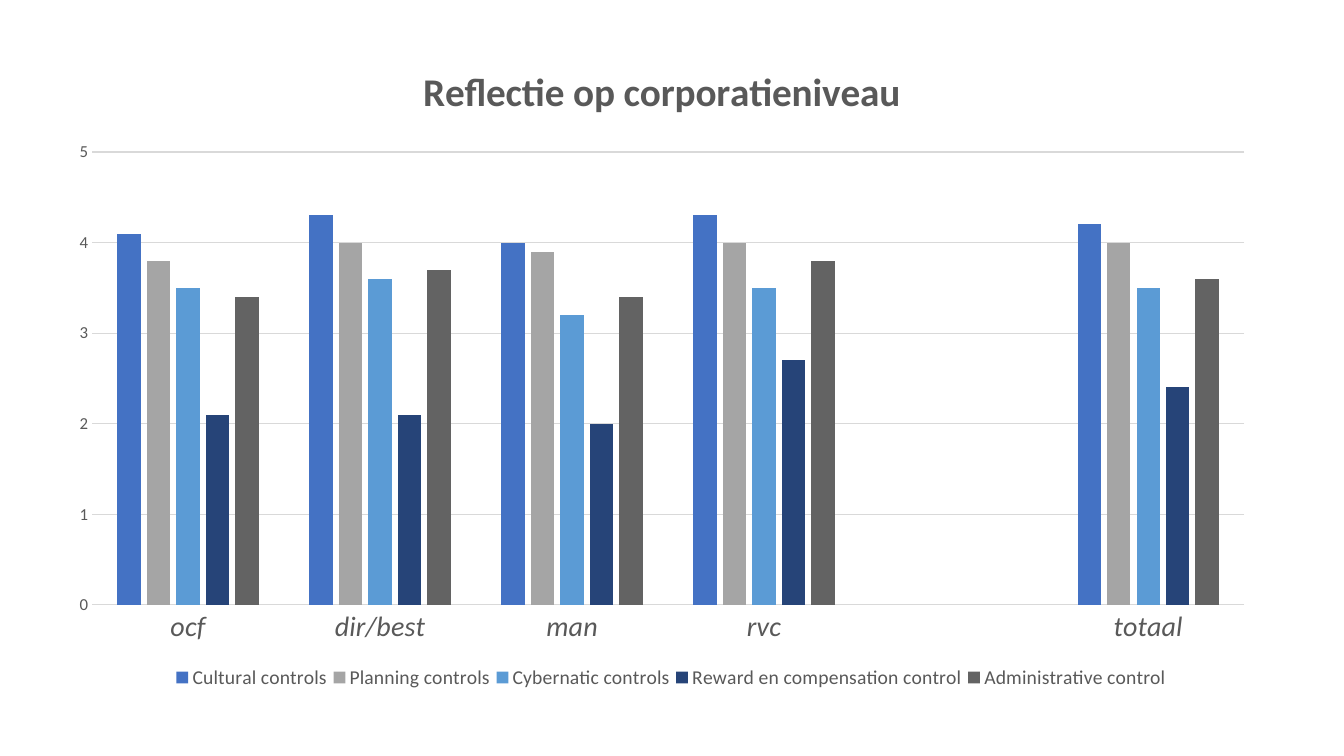
from lxml import etree
from pptx import Presentation, util as u
from pptx.chart.data import CategoryChartData
from pptx.dml.color import RGBColor
from pptx.enum import chart as c
from pptx.oxml import ns

# Content
TITLE = "Reflectie op corporatieniveau"
GROUPS = ["ocf", "dir/best", "man", "rvc", "", "totaal"]
CONTROLS = [
    ("Cultural controls", "blue", [4.1, 4.3, 4, 4.3, None, 4.2]),
    ("Planning controls", "silver", [3.8, 4, 3.9, 4, None, 4]),
    ("Cybernatic controls", "sky", [3.5, 3.6, 3.2, 3.5, None, 3.5]),
    ("Reward en compensation control", "navy", [2.1, 2.1, 2, 2.7, None, 2.4]),
    ("Administrative control", "slate", [3.4, 3.7, 3.4, 3.8, None, 3.6]),
]
COLORS = {
    "blue": "4472C4", "silver": "A5A5A5", "sky": "5B9BD5", "navy": "264478",
    "slate": "636363", "text": "595959", "rule": "D9D9D9",
}

# Geometry in px
PX = 9071  # EMU per px
CHART = (55, 39, 1213, 656)
PLOT = (92, 152, 1152, 453)
TITLE_AT = (416, 58)
LEGEND = (170, 660, 1002, 35)


def rgb(name):
    return RGBColor.from_string(COLORS[name])


def style(font, size, bold=False, italic=False, color="text"):
    font.name, font.size = "Calibri", u.Pt(size)
    font.bold, font.italic = bold, italic
    font.color.rgb = rgb(color)


def write(frame, text, **fmt):
    run = frame.paragraphs[0].add_run()
    run.text = text
    style(run.font, **fmt)


def rule(line):
    line.color.rgb, line.width = rgb("rule"), u.Pt(0.75)


def place(parent, index, left, top, *size, inner=False):
    """Give a chart part a fixed place, as fractions of the chart area."""
    for old in parent.findall(ns.qn("c:layout")):
        parent.remove(old)
    layout = etree.Element(ns.qn("c:layout"))
    manual = etree.SubElement(layout, ns.qn("c:manualLayout"))
    fractions = [(left - CHART[0]) / CHART[2], (top - CHART[1]) / CHART[3]]
    fractions += [length / whole for length, whole in zip(size, CHART[2:])]
    settings = [("layoutTarget", "inner")] if inner else []
    settings += [("xMode", "edge"), ("yMode", "edge")]
    settings += [(tag, f"{value:.4f}") for tag, value in zip("xywh", fractions)]
    for tag, value in settings:
        etree.SubElement(manual, ns.qn(f"c:{tag}")).set("val", value)
    parent.insert(index, layout)


def build_chart(slide):
    data = CategoryChartData(number_format="0.0")
    data.categories = GROUPS
    for name, _, scores in CONTROLS:
        data.add_series(name, scores)
    chart = slide.shapes.add_chart(
        c.XL_CHART_TYPE.COLUMN_CLUSTERED, *(v * PX for v in CHART), data).chart
    style(chart.font, 10)

    # Title
    chart.has_title = True
    write(chart.chart_title.text_frame, TITLE, size=28, bold=True)
    chart.chart_title.include_in_layout = False
    place(chart.chart_title._element, 1, *TITLE_AT)

    # Columns
    plot = chart.plots[0]
    plot.gap_width, plot.overlap, plot.vary_by_categories = 219, -27, False
    for series, (_, color, _) in zip(plot.series, CONTROLS):
        series.format.fill.solid()
        series.format.fill.fore_color.rgb = rgb(color)
        series.invert_if_negative = False
    place(chart._chartSpace.chart.plotArea, 0, *PLOT, inner=True)

    # Axes
    groups, scores = chart.category_axis, chart.value_axis
    for axis in (groups, scores):
        axis.major_tick_mark = axis.minor_tick_mark = c.XL_TICK_MARK.NONE
    style(groups.tick_labels.font, 20, italic=True)
    rule(groups.format.line)
    style(scores.tick_labels.font, 12)
    scores.tick_labels.number_format = "0"
    scores.tick_labels.number_format_is_linked = False
    scores.minimum_scale, scores.maximum_scale, scores.major_unit = 0, 5, 1
    scores.format.line.fill.background()
    rule(scores.major_gridlines.format.line)

    # Legend
    chart.has_legend = True
    chart.legend.position = c.XL_LEGEND_POSITION.BOTTOM
    chart.legend.include_in_layout = False
    style(chart.legend.font, 14)
    place(chart.legend._element, 1, *LEGEND)


def main():
    deck = Presentation()
    deck.slide_width, deck.slide_height = u.Inches(13.33), u.Inches(7.5)
    build_chart(deck.slides.add_slide(deck.slide_layouts[6]))
    deck.save("out.pptx")


if __name__ == "__main__":
    main()
